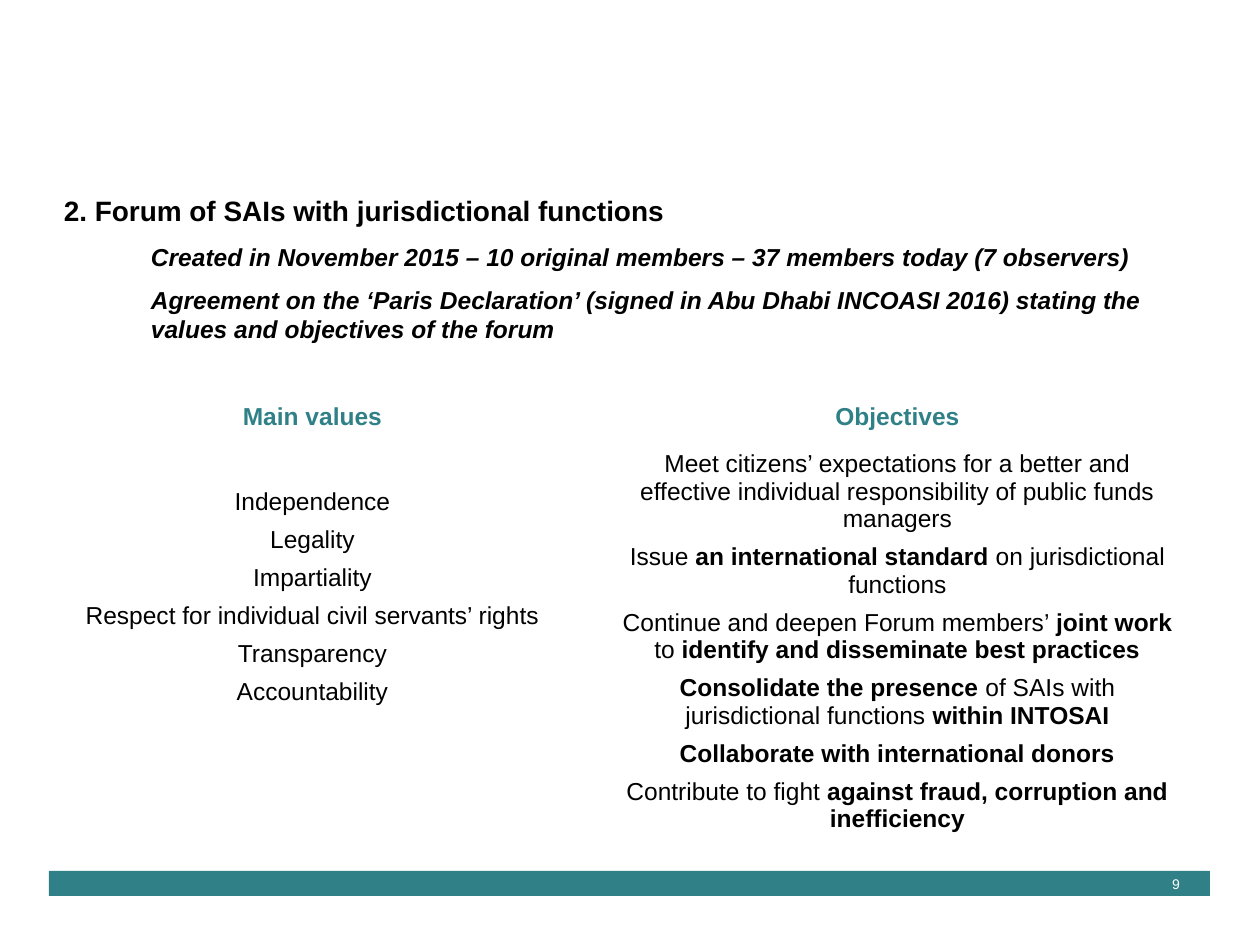
from dataclasses import dataclass

from pptx import Presentation
from pptx import util as u
from pptx.dml.color import RGBColor
from pptx.enum import shapes, text


def px(n):
    return u.Emu(round(n * 914400 / 126))


@dataclass(frozen=True)
class Theme:
    font: str = "Arial"
    teal: RGBColor = RGBColor(0x30, 0x80, 0x87)
    ink: RGBColor = RGBColor(0, 0, 0)
    white: RGBColor = RGBColor(255, 255, 255)
    head: int = 16
    body: int = 14
    note: int = 8


T = Theme()

TITLE = "2. Forum of SAIs with jurisdictional functions"
FACTS = [
    "Created in November 2015 – 10 original members – 37 members today (7 observers)",
    "Agreement on the ‘Paris Declaration’ (signed in Abu Dhabi INCOASI 2016) "
    "stating the values and objectives of the forum",
]
VALUES = [
    "Independence",
    "Legality",
    "Impartiality",
    "Respect for individual civil servants’ rights",
    "Transparency",
    "Accountability",
]
# Asterisks enclose bold words
GOALS = [
    "Meet citizens’ expectations for a better and effective individual "
    "responsibility of public funds managers",
    "Issue *an international standard* on jurisdictional functions",
    "Continue and deepen Forum members’ *joint work* to "
    "*identify and disseminate best practices*",
    "*Consolidate the presence* of SAIs with jurisdictional functions *within INTOSAI*",
    "*Collaborate with international donors*",
    "Contribute to fight *against fraud, corruption and inefficiency*",
]


def style(run, size, color, bold=False, italic=False):
    font = run.font
    font.name, font.size = T.font, u.Pt(size)
    font.bold, font.italic = bold, italic
    font.color.rgb = color


def frame(slide, x, y, w, h):
    """Add a wrapping text box without insets."""
    tf = slide.shapes.add_textbox(px(x), px(y), px(w), px(h)).text_frame
    tf.word_wrap = True
    tf.margin_left = tf.margin_right = tf.margin_top = tf.margin_bottom = 0
    return tf


def intro(slide, x, y, w, h):
    tf = frame(slide, x, y, w, h)
    tf.text = "\n".join([TITLE, *FACTS])
    for i, para in enumerate(tf.paragraphs):
        para.space_after = u.Pt(8)
        fact = i > 0
        if fact:
            para._p.get_or_add_pPr().set("marL", str(px(87)))
        style(para.runs[0], T.body if fact else T.head, T.ink, True, fact)


def fill(cell, lines, color, bold=False):
    """Write centred lines in a clear cell."""
    cell.fill.background()
    tf = cell.text_frame
    for i, line in enumerate(lines):
        para = tf.add_paragraph() if i else tf.paragraphs[0]
        para.alignment = text.PP_ALIGN.CENTER
        if i:
            para.space_before = u.Pt(6)
        for j, part in enumerate(line.split("*")):
            if part:
                run = para.add_run()
                run.text = part
                style(run, T.body, color, bold or j % 2 == 1)


def grid(slide, x, y, w, h):
    top = 47
    table = slide.shapes.add_table(2, 2, px(x), px(y), px(w), px(h)).table
    table.first_row = table.horz_banding = False
    table.rows[0].height, table.rows[1].height = px(top), px(h - top)
    cols = [("Main values", VALUES), ("Objectives", GOALS)]
    for i, (name, lines) in enumerate(cols):
        table.columns[i].width = px(w / 2)
        fill(table.cell(0, i), [name], T.teal, True)
        fill(table.cell(1, i), lines, T.ink)
    # Values start one line lower than objectives
    table.cell(1, 0).margin_top = px(44)


def footer(slide, x, y, w, h):
    bar = slide.shapes.add_shape(
        shapes.MSO_SHAPE.RECTANGLE, px(x), px(y), px(w), px(h))
    bar.shadow.inherit = False
    bar.fill.solid()
    bar.fill.fore_color.rgb = T.teal
    bar.line.fill.background()

    # Page number at the right end of the bar
    wide = 123
    tf = frame(slide, x + w - wide, y, wide, h)
    tf.margin_right = px(30)
    tf.vertical_anchor = text.MSO_ANCHOR.MIDDLE
    tf.text = "9"
    para = tf.paragraphs[0]
    para.alignment = text.PP_ALIGN.RIGHT
    style(para.runs[0], T.note, T.white)


def main():
    deck = Presentation()
    deck.slide_width, deck.slide_height = px(1260), px(945)
    slide = deck.slides.add_slide(deck.slide_layouts[6])
    footer(slide, 49, 871, 1161, 25)
    intro(slide, 64, 194, 1147, 194)
    grid(slide, 20, 397, 1170, 465)
    deck.save("out.pptx")


if __name__ == "__main__":
    main()
